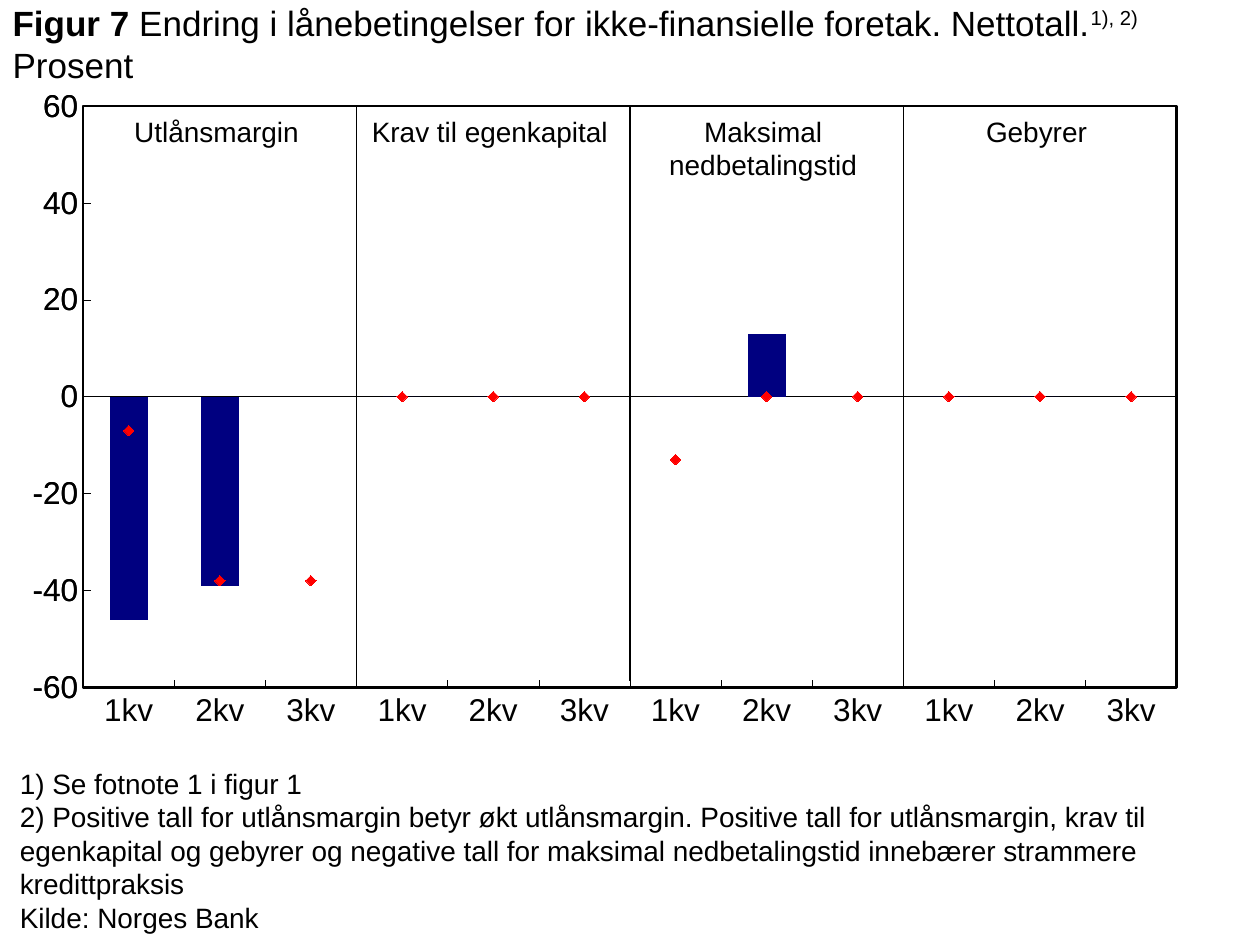
from copy import deepcopy
from dataclasses import dataclass

from lxml import etree
from pptx import Presentation
from pptx.chart.axis import CategoryAxis, ValueAxis
from pptx.chart.data import CategoryChartData
from pptx.dml.color import RGBColor
from pptx.enum.chart import (XL_AXIS_CROSSES, XL_CHART_TYPE, XL_MARKER_STYLE,
                             XL_TICK_LABEL_POSITION, XL_TICK_MARK)
from pptx.enum.shapes import MSO_CONNECTOR
from pptx.enum.text import MSO_ANCHOR, MSO_AUTO_SIZE, PP_ALIGN
from pptx.oxml import parse_xml
from pptx.oxml.ns import nsdecls, qn
from pptx.util import Cm, Pt

COLUMNS = XL_CHART_TYPE.COLUMN_CLUSTERED
DIAMOND = XL_MARKER_STYLE.DIAMOND
AT_MINIMUM, AT_MAXIMUM = XL_AXIS_CROSSES.MINIMUM, XL_AXIS_CROSSES.MAXIMUM
NO_LABELS = XL_TICK_LABEL_POSITION.NONE
LABELS_BESIDE_AXIS = XL_TICK_LABEL_POSITION.NEXT_TO_AXIS
TICK_INSIDE, NO_TICK = XL_TICK_MARK.INSIDE, XL_TICK_MARK.NONE
STRAIGHT = MSO_CONNECTOR.STRAIGHT
TOP, MIDDLE = MSO_ANCHOR.TOP, MSO_ANCHOR.MIDDLE
FIXED_SIZE = MSO_AUTO_SIZE.NONE
LEFT, CENTER = PP_ALIGN.LEFT, PP_ALIGN.CENTER

COLORS = {"text": "000000", "line": "000000", "bar": "000080", "marker": "FF0000"}
FONT = "Arial"
QUARTERS = ["1kv", "2kv", "3kv"]
PLOT_LAYOUT = {"x": 0.066, "y": 0.026, "w": 0.868, "h": 0.866}
PANEL_WIDTH = 5.51
PLOT_LEFT = 1.68


@dataclass
class Panel:
    """One loan condition: reported change as bars, expected change as markers."""
    name: str
    reported: list
    expected: list


@dataclass
class Span:
    text: str
    bold: bool = False
    superscript: bool = False


PANELS = [
    Panel("Utlånsmargin", [-46, -39, None], [-7, -38, -38]),
    Panel("Krav til egenkapital", [0, 0, None], [0, 0, 0]),
    Panel("Maksimal nedbetalingstid", [0, 13, None], [-13, 0, 0]),
    Panel("Gebyrer", [0, 0, None], [0, 0, 0]),
]
TITLE = [
    Span("Figur 7", bold=True),
    Span(" Endring i lånebetingelser for ikke-finansielle foretak. Nettotall."),
    Span("1), 2)", superscript=True),
    Span(" Prosent"),
]
FOOTNOTES = [
    "1) Se fotnote 1 i figur 1",
    "2) Positive tall for utlånsmargin betyr økt utlånsmargin. "
    "Positive tall for utlånsmargin, krav til",
    "egenkapital og gebyrer og negative tall for maksimal nedbetalingstid innebærer strammere",
    "kredittpraksis",
    "Kilde: Norges Bank",
]


def color(name: str) -> RGBColor:
    return RGBColor.from_string(COLORS[name])


def set_all(target, values: dict) -> None:
    for name, value in values.items():
        setattr(target, name, value)


def set_font(font, size: float, bold: bool = False) -> None:
    set_all(font, {"name": FONT, "size": Pt(size), "bold": bold})
    font.color.rgb = color("text")


def set_line(line, width: float) -> None:
    line.color.rgb = color("line")
    line.width = Pt(width)


def add_title(slide) -> None:
    title = slide.shapes.title
    set_all(title, {"left": Cm(0), "top": Cm(0), "width": Cm(23.83), "height": Cm(1.75)})
    set_all(title.text_frame, {"word_wrap": True, "auto_size": FIXED_SIZE,
                               "vertical_anchor": MIDDLE})
    para = title.text_frame.paragraphs[0]
    para.alignment = LEFT
    for span in TITLE:
        run = para.add_run()
        run.text = span.text
        set_font(run.font, 20, span.bold)
        if span.superscript:
            run.font._element.set("baseline", "30000")


def add_text(slide, lines: list[str], left: float, top: float, width: float,
             height: float, alignment) -> None:
    box = slide.shapes.add_textbox(Cm(left), Cm(top), Cm(width), Cm(height))
    frame = box.text_frame
    set_all(frame, {"word_wrap": True, "vertical_anchor": TOP, "text": "\n".join(lines)})
    for para in frame.paragraphs:
        para.alignment = alignment
        set_font(para.runs[0].font, 16)


def add_divider(slide, left: float) -> None:
    divider = slide.shapes.add_connector(STRAIGHT, Cm(left), Cm(13.72), Cm(left), Cm(2.13))
    set_line(divider.line, 0.75)
    etree.SubElement(divider._element.spPr, qn("a:effectLst"))


def panel_values(position: int, values: list) -> list:
    """Place one panel's values among empty points for the other panels."""
    size = len(QUARTERS)
    before = [None] * (position * size)
    return before + values + [None] * ((len(PANELS) - position - 1) * size)


def frame_plot(plot_area) -> None:
    """Fix the inner plot size and draw its border."""
    for old in plot_area.findall(qn("c:layout")):
        plot_area.remove(old)
    parts = "".join(f'<c:{key} val="{value}"/>' for key, value in PLOT_LAYOUT.items())
    plot_area.insert(0, parse_xml(
        f'<c:layout {nsdecls("c")}><c:manualLayout><c:layoutTarget val="inner"/>'
        f'<c:xMode val="edge"/><c:yMode val="edge"/>{parts}</c:manualLayout></c:layout>'))
    plot_area.append(parse_xml(
        f'<c:spPr {nsdecls("c", "a")}><a:noFill/><a:ln w="19050"><a:solidFill>'
        f'<a:srgbClr val="{COLORS["line"]}"/></a:solidFill></a:ln></c:spPr>'))


def move_to_second_axes(chart, first: int) -> None:
    """Turn the series from number first onwards into lines on a second pair of axes."""
    plot_area = chart._chartSpace.chart.plotArea
    bars = plot_area.find(qn("c:barChart"))
    lines = parse_xml(
        f'<c:lineChart {nsdecls("c")}><c:grouping val="standard"/><c:varyColors val="0"/>'
        '<c:marker val="1"/><c:axId val="5001"/><c:axId val="5002"/></c:lineChart>')
    marker_flag = lines.find(qn("c:marker"))
    for series in bars.findall(qn("c:ser"))[first:]:
        for bar_only in series.findall(qn("c:invertIfNegative")):
            series.remove(bar_only)
        marker_flag.addprevious(series)
    bars.addnext(lines)

    category, value = (deepcopy(plot_area.find(qn(tag))) for tag in ("c:catAx", "c:valAx"))
    for axis, own, other, side in ((category, "5001", "5002", "b"),
                                   (value, "5002", "5001", "r")):
        for tag, setting in (("c:axId", own), ("c:crossAx", other), ("c:axPos", side)):
            axis.find(qn(tag)).set("val", setting)
    last_axis = plot_area.findall(qn("c:valAx"))[-1]
    last_axis.addnext(value)
    value.addnext(category)

    bottom_axis, right_axis = CategoryAxis(category), ValueAxis(value)
    set_all(bottom_axis, {"tick_label_position": LABELS_BESIDE_AXIS,
                          "major_tick_mark": TICK_INSIDE, "crosses": AT_MAXIMUM})
    right_axis.crosses = AT_MINIMUM


def add_chart(slide) -> None:
    data = CategoryChartData()
    data.categories = QUARTERS * len(PANELS)
    for kind in ("reported", "expected"):
        for position, panel in enumerate(PANELS):
            data.add_series(panel.name, panel_values(position, getattr(panel, kind)))
    chart = slide.shapes.add_chart(COLUMNS, Cm(0), Cm(1.78), Cm(25.4), Cm(13.54), data).chart
    set_all(chart, {"has_legend": False, "has_title": False})
    set_font(chart.font, 18)
    set_all(chart.plots[0], {"gap_width": 140, "overlap": 100, "vary_by_categories": False})

    set_all(chart.value_axis, {"minimum_scale": -60, "maximum_scale": 60, "major_unit": 20,
                               "has_major_gridlines": False, "major_tick_mark": TICK_INSIDE})
    set_all(chart.value_axis.tick_labels, {"number_format": "0",
                                          "number_format_is_linked": False})
    set_all(chart.category_axis, {"tick_label_position": NO_LABELS,
                                  "major_tick_mark": NO_TICK})
    for axis in (chart.value_axis, chart.category_axis):
        set_line(axis.format.line, 0.25)
        set_font(axis.tick_labels.font, 18)

    move_to_second_axes(chart, len(PANELS))
    frame_plot(chart._chartSpace.chart.plotArea)
    bars, markers = chart.plots
    for series in bars.series:
        series.invert_if_negative = False
        series.format.fill.solid()
        series.format.fill.fore_color.rgb = color("bar")
    for series in markers.series:
        series.smooth = False
        series.format.line.fill.background()
        set_all(series.marker, {"style": DIAMOND, "size": 6})
        series.marker.format.fill.solid()
        series.marker.format.fill.fore_color.rgb = color("marker")
        series.marker.format.line.color.rgb = color("marker")


def main() -> None:
    deck = Presentation()
    set_all(deck, {"slide_width": Cm(25.4), "slide_height": Cm(19.05)})
    page = deck.slides.add_slide(deck.slide_layouts[5])
    add_chart(page)
    for position, panel in enumerate(PANELS):
        left = PLOT_LEFT + position * PANEL_WIDTH
        add_text(page, [panel.name], left - 0.07, 2.18, PANEL_WIDTH, 0.94, CENTER)
        if position:
            add_divider(page, left)
    add_text(page, FOOTNOTES, 0.15, 15.32, 25.25, 3.53, LEFT)
    add_title(page)
    deck.save("out.pptx")


if __name__ == "__main__":
    main()
